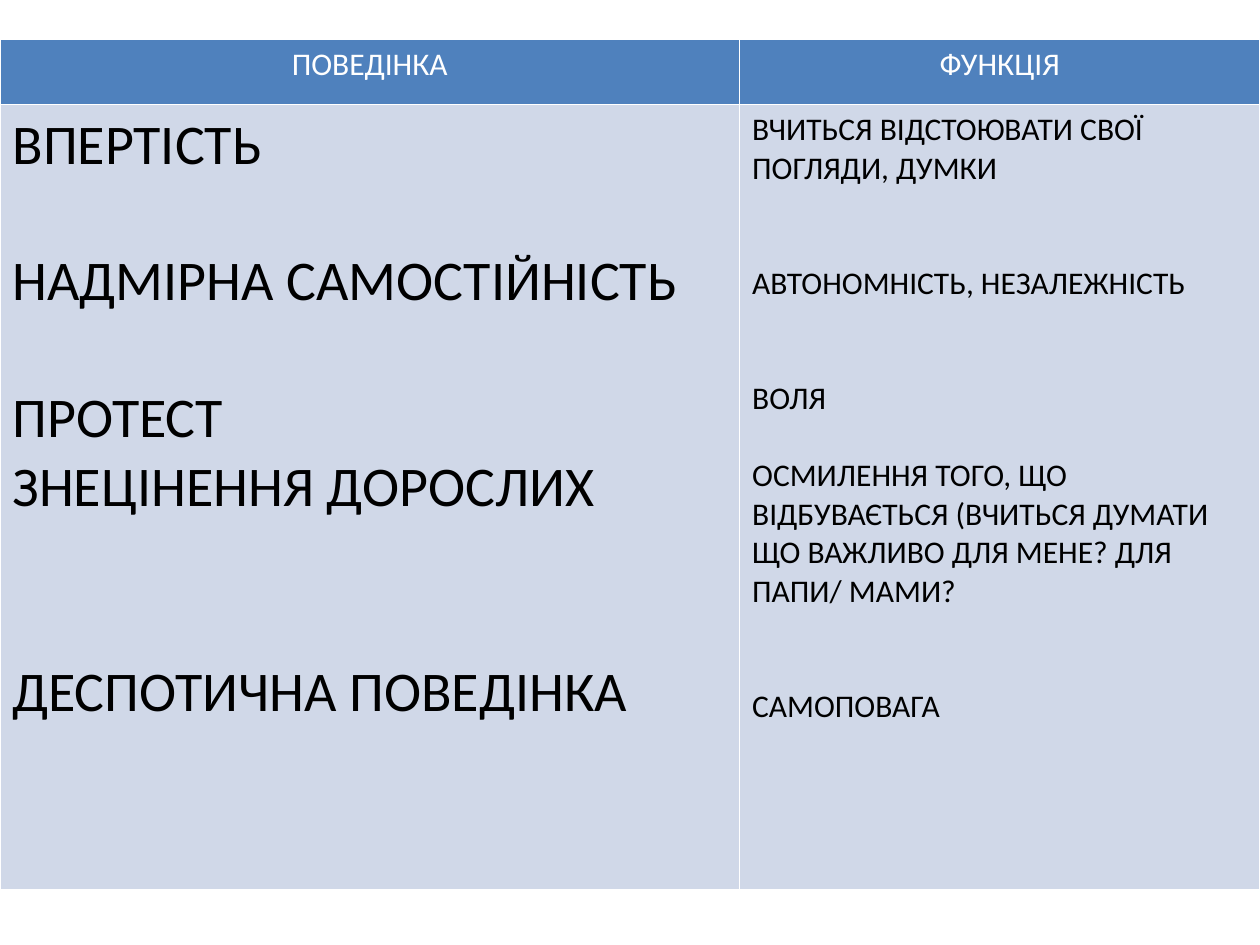
import lxml.etree
import pptx
import pptx.dml.color
import pptx.enum.text
import pptx.oxml.ns
import pptx.util

Inches = pptx.util.Inches
Pt = pptx.util.Pt
RGBColor = pptx.dml.color.RGBColor
PP_ALIGN = pptx.enum.text.PP_ALIGN

WHITE = RGBColor(0xFF, 0xFF, 0xFF)
BLACK = RGBColor(0x00, 0x00, 0x00)
HEADER_BLUE = RGBColor(0x4F, 0x81, 0xBD)
BODY_BLUE = RGBColor(0xD0, 0xD8, 0xE8)

FONT = "Calibri"
LINE_HEIGHT = 1.22  # one line of Calibri, as a multiple of its size
COLUMN_WIDTHS = [5.87, 4.13]
ROW_HEIGHTS = [0.52, 6.23]

HEADERS = ["ПОВЕДІНКА", "ФУНКЦІЯ"]
# Each entry: text, and the number of lines left free above it
BEHAVIOURS = [
    ("ВПЕРТІСТЬ", 0),
    ("НАДМІРНА САМОСТІЙНІСТЬ", 1),
    ("ПРОТЕСТ", 1),
    ("ЗНЕЦІНЕННЯ ДОРОСЛИХ", 0),
    ("ДЕСПОТИЧНА ПОВЕДІНКА", 2),
]
FUNCTIONS = [
    ("ВЧИТЬСЯ ВІДСТОЮВАТИ СВОЇ ПОГЛЯДИ, ДУМКИ", 0),
    ("АВТОНОМНІСТЬ, НЕЗАЛЕЖНІСТЬ", 2),
    ("ВОЛЯ", 2),
    ("ОСМИЛЕННЯ ТОГО, ЩО ВІДБУВАЄТЬСЯ (ВЧИТЬСЯ ДУМАТИ ЩО ВАЖЛИВО ДЛЯ МЕНЕ? "
     "ДЛЯ ПАПИ/ МАМИ?", 1),
    ("САМОПОВАГА", 2),
]

HEADER_FORMAT = {"size": Pt(18), "name": FONT, "bold": False}
BEHAVIOUR_FORMAT = {"size": Pt(32), "name": FONT, "bold": False}
FUNCTION_FORMAT = {"size": Pt(18), "name": FONT, "bold": False}


def set_borders(cell, color, width):
    properties = cell._tc.get_or_add_tcPr()
    for side in ("a:lnL", "a:lnR", "a:lnT", "a:lnB"):
        line = lxml.etree.SubElement(properties, pptx.oxml.ns.qn(side), w=str(width))
        fill = lxml.etree.SubElement(line, pptx.oxml.ns.qn("a:solidFill"))
        lxml.etree.SubElement(fill, pptx.oxml.ns.qn("a:srgbClr"), val=str(color))


def set_hanging_indent(para, indent):
    properties = para._p.get_or_add_pPr()
    properties.set("marL", str(indent))
    properties.set("indent", str(-indent))


def fill_cell(cell, entries, font_format, color, background, align, indent=0):
    # Borders come before the fill in the cell properties
    set_borders(cell, WHITE, Pt(1))
    cell.fill.solid()
    cell.fill.fore_color.rgb = background
    frame = cell.text_frame
    for index, (text, free_lines) in enumerate(entries):
        para = frame.add_paragraph() if index else frame.paragraphs[0]
        para.alignment = align
        para.space_before = Pt(free_lines * LINE_HEIGHT * font_format["size"].pt)
        if indent:
            set_hanging_indent(para, indent)
        span = para.add_run()
        span.text = text
        span.font.color.rgb = color
        for attribute, value in font_format.items():
            setattr(span.font, attribute, value)


def add_behaviour_table(page):
    table = page.shapes.add_table(
        len(ROW_HEIGHTS), len(COLUMN_WIDTHS), Inches(0), Inches(0.31),
        Inches(sum(COLUMN_WIDTHS)), Inches(sum(ROW_HEIGHTS))).table
    for column, width in zip(table.columns, COLUMN_WIDTHS):
        column.width = Inches(width)
    for row, height in zip(table.rows, ROW_HEIGHTS):
        row.height = Inches(height)
    for index, header in enumerate(HEADERS):
        fill_cell(table.cell(0, index), [(header, 0)], HEADER_FORMAT,
                  WHITE, HEADER_BLUE, PP_ALIGN.CENTER)
    fill_cell(table.cell(1, 0), BEHAVIOURS, BEHAVIOUR_FORMAT,
              BLACK, BODY_BLUE, PP_ALIGN.LEFT, Inches(0.56))
    fill_cell(table.cell(1, 1), FUNCTIONS, FUNCTION_FORMAT,
              BLACK, BODY_BLUE, PP_ALIGN.LEFT)


def main():
    deck = pptx.Presentation()
    deck.slide_width = Inches(10)
    deck.slide_height = Inches(7.5)
    blank_layout = deck.slide_layouts[6]
    page = deck.slides.add_slide(blank_layout)
    add_behaviour_table(page)
    deck.save("out.pptx")


if __name__ == "__main__":
    main()
